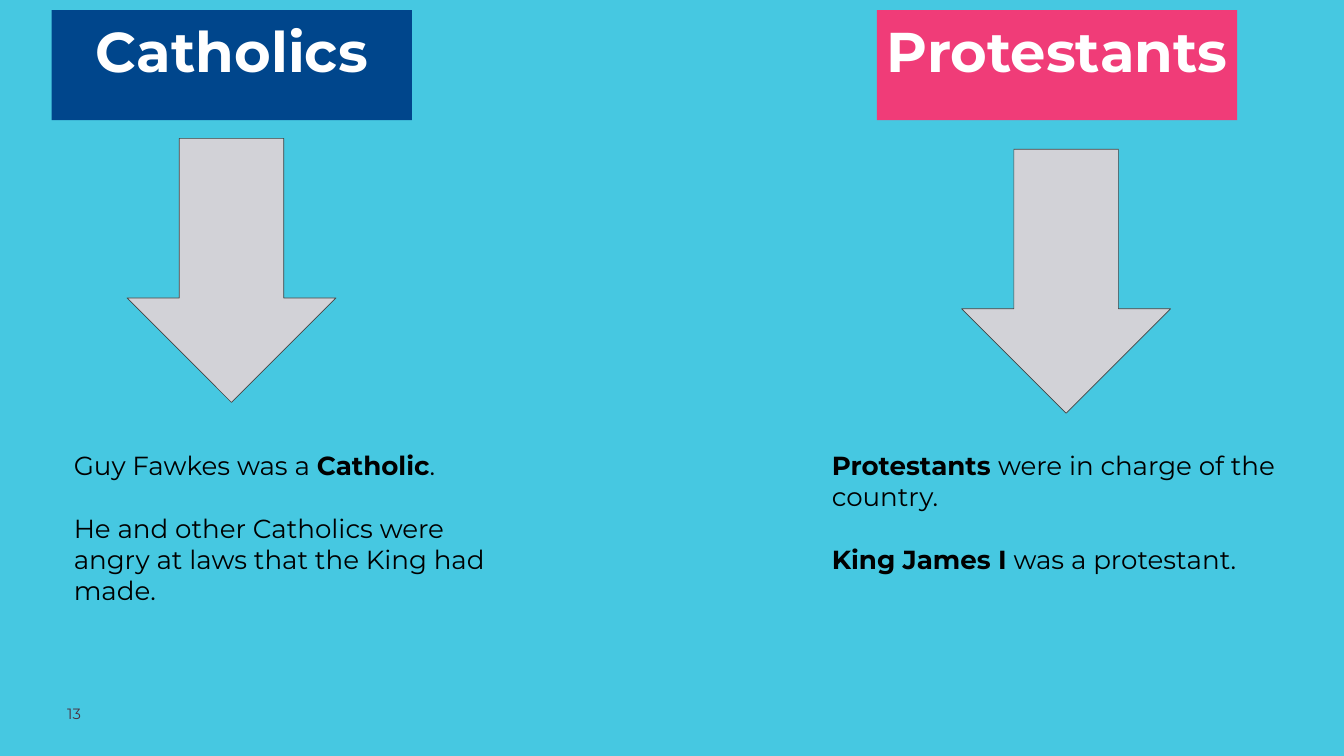
"""Build the slide that contrasts Catholics and Protestants."""
from pptx import Presentation
from pptx.dml.color import RGBColor
from pptx.enum.shapes import MSO_SHAPE as Shape
from pptx.enum.text import MSO_ANCHOR as Anchor, PP_ALIGN as Align
from pptx.util import Inches, Pt


def color(code):
    return RGBColor.from_string(code)


def write(shape, paras, size=28, ink="000000", align=Align.LEFT, gap=0, inset=0.1):
    frame = shape.text_frame
    frame.word_wrap = True
    frame.vertical_anchor = Anchor.TOP
    frame.margin_left = frame.margin_right = Inches(inset)
    frame.margin_top = frame.margin_bottom = Inches(inset)
    for i, runs in enumerate(paras):
        para = frame.add_paragraph() if i else frame.paragraphs[0]
        para.alignment = align
        if i:
            para.space_before = Pt(gap)
        for text, bold in runs:
            run = para.add_run()
            run.text = text
            font = run.font
            font.name, font.size, font.bold = "Montserrat", Pt(size), bold
            font.color.rgb = color(ink)


deck = Presentation()
deck.slide_width, deck.slide_height = Inches(20), Inches(11.25)
slide = deck.slides.add_slide(deck.slide_layouts[6])
slide.background.fill.solid()
slide.background.fill.fore_color.rgb = color("46C8E1")
shapes = slide.shapes

sides = [
    ("Catholics", "00468C", 0.77, (1.89, 2.06), 1, [
        [("Guy Fawkes was a ", False), ("Catholic", True), (".", False)],
        [("He and other Catholics were angry at laws that the King had made.", False)],
    ]),
    ("Protestants", "F03C78", 13.05, (14.31, 2.22), 12.28, [
        [("Protestants ", True), ("were in charge of the country.", False)],
        [("King James I", True), (" was a protestant.", False)],
    ]),
]

for name, fill, left, (x, y), edge, paras in sides:
    head = shapes.add_shape(
        Shape.RECTANGLE, Inches(left), Inches(0.15), Inches(5.36), Inches(1.64))
    head.shadow.inherit = False
    head.fill.solid()
    head.fill.fore_color.rgb = color(fill)
    head.line.fill.background()
    write(head, [[(name, True)]], size=60, ink="FFFFFF", align=Align.CENTER)

    arrow = shapes.add_shape(
        Shape.DOWN_ARROW, Inches(x), Inches(y), Inches(3.11), Inches(3.93))
    arrow.shadow.inherit = False
    arrow.fill.solid()
    arrow.fill.fore_color.rgb = color("D2D2D7")
    arrow.line.color.rgb = color("434343")
    arrow.line.width = Pt(0.75)

    body = shapes.add_textbox(Inches(edge), Inches(6.58), Inches(6.9), Inches(2.15))
    write(body, paras, gap=34)

number = shapes.add_textbox(Inches(1), Inches(10.48), Inches(1.57), Inches(0.39))
write(number, [[("13", False)]], size=16, ink="4B3241", inset=0)

deck.save("out.pptx")
